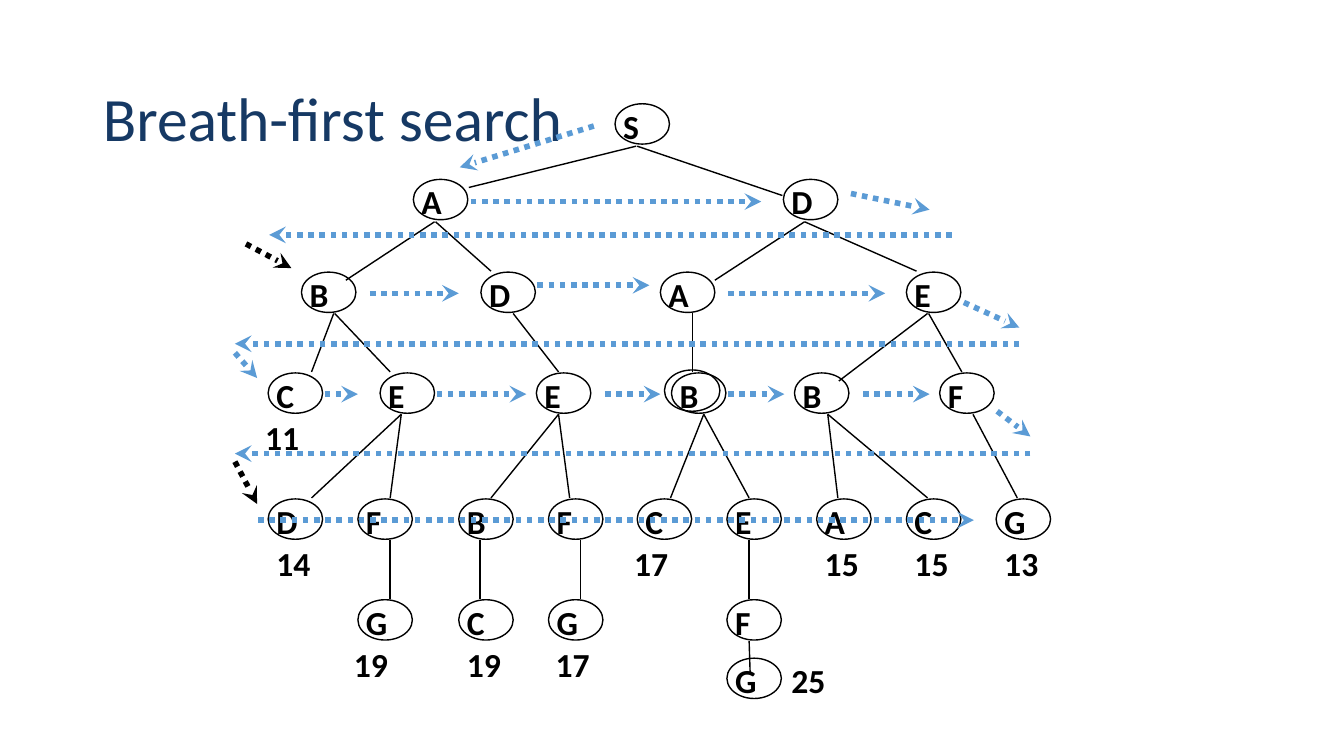
import pptx
import pptx.util
import pptx.dml.color
import pptx.enum.dml
import pptx.enum.shapes
import pptx.enum.text
import pptx.oxml
import pptx.oxml.ns

Inches = pptx.util.Inches
COLORS = {"title": "163964", "ink": "000000", "visit": "5B9BD5"}
FONT = "Calibri"
NODE_W, NODE_H = 0.54, 0.4
LETTER_WIDTHS = {"A": 0.34, "B": 0.33, "C": 0.32, "D": 0.35, "E": 0.31,
                 "F": 0.29, "G": 0.35, "S": 0.3}
COST_W = 0.48

# Each tree level: top, then (letter, left) of its nodes
LEVELS = [
    (1.03, [("S", 6.1)]),
    (1.78, [("A", 4.1), ("D", 7.77)]),
    (2.7, [("B", 2.99), ("D", 4.77), ("A", 6.55), ("E", 8.99)]),
    (3.7, [("C", 2.66), ("E", 3.77), ("E", 5.32), ("B", 6.66), ("B", 7.88), ("F", 9.32)]),
    (4.95, [("D", 2.66), ("F", 3.55), ("B", 4.55), ("F", 5.44), ("C", 6.32),
            ("E", 7.21), ("A", 8.1), ("C", 8.99), ("G", 9.88)]),
    (5.95, [("G", 3.55), ("C", 4.55), ("G", 5.44), ("F", 7.21)]),
    (6.53, [("G", 7.21)]),
]

# Each gap between levels: parent y, child y, then (parent x, child x)
BRANCHES = [
    (2.2, 2.69, [(4.32, 4.87), (7.98, 9.09)]),
    (2.2, 2.78, [(4.31, 3.43), (7.98, 7.09)]),
    (3.11, 3.69, [(3.31, 3.09), (3.32, 3.87), (5.09, 5.54), (6.87, 6.87), (9.21, 9.54)]),
    (4.11, 4.94, [(3.98, 3.09), (3.98, 3.87), (5.54, 4.87), (5.54, 5.65), (6.98, 6.65),
                  (6.98, 7.43), (8.21, 8.31), (8.21, 9.2), (9.65, 10.09)]),
    (5.36, 5.94, [(x, x) for x in (3.87, 4.76, 5.76, 7.43)]),
    (1.45, 1.86, [(6.31, 4.65)]),
    (1.45, 1.94, [(6.32, 7.76)]),
    (3.11, 3.78, [(9.2, 8.32)]),
    (6.36, 6.67, [(7.43, 7.44)]),
]

# Each cost row: top, then (cost, left)
COSTS = [
    (4.17, [("11", 2.56)]),
    (5.42, [("14", 2.67), ("17", 6.22), ("15", 8.11), ("15", 9), ("13", 9.89)]),
    (6.42, [("19", 3.44), ("19", 4.56), ("17", 5.44)]),
    (6.58, [("25", 7.78)]),
]

# Horizontal visiting arrows: y, then (start x, end x)
SWEEPS = [
    (2, [(4.67, 7.55)]),
    (2.33, [(9.44, 2.67)]),
    (2.91, [(3.67, 4.55), (7.22, 8.78)]),
    (2.83, [(5.33, 6.44)]),
    (3.41, [(10.11, 2.33)]),
    (3.91, [(3.22, 3.55), (4.33, 5.22), (6, 6.55), (7.22, 7.78), (8.56, 9.22)]),
    (4.5, [(10.22, 2.33)]),
    (5.16, [(2.56, 9.66)]),
]

# Slanted arrows between levels: colour, start, end
TURNS = [
    ("visit", (5.89, 1.25), (4.56, 1.66)),
    ("visit", (8.44, 1.92), (9.22, 2.08)),
    ("ink", (2.44, 2.42), (2.89, 2.66)),
    ("visit", (9.56, 3), (10.11, 3.25)),
    ("visit", (2.33, 3.5), (2.55, 3.75)),
    ("visit", (9.89, 4.08), (10.22, 4.33)),
    ("ink", (2.33, 4.58), (2.55, 5)),
]


def rgb(name):
    return pptx.dml.color.RGBColor.from_string(COLORS[name])


def write(tf, text, size=24, color="ink", bold=True, spacing=0.85):
    p = tf.paragraphs[0]
    p.alignment = pptx.enum.text.PP_ALIGN.LEFT
    p.line_spacing = spacing
    r = p.add_run()
    r.text = text
    r.font.name = FONT
    r.font.size = pptx.util.Pt(size)
    r.font.bold = bold
    r.font.color.rgb = rgb(color)


def add_title(s, text):
    sp = s.shapes.title
    sp.left, sp.top, sp.width, sp.height = map(Inches, (0.92, 0.56, 11.5, 1.29))
    tf = sp.text_frame
    tf.auto_size = pptx.enum.text.MSO_AUTO_SIZE.NONE
    tf.vertical_anchor = pptx.enum.text.MSO_ANCHOR.MIDDLE
    write(tf, text, size=44, color="title", bold=False, spacing=0.9)


def add_label(s, text, left, top, width):
    tf = s.shapes.add_textbox(Inches(left), Inches(top), Inches(width), Inches(0.4)).text_frame
    tf.margin_left = tf.margin_right = Inches(0.07)
    tf.margin_top = tf.margin_bottom = Inches(0.03)
    tf.word_wrap = False
    tf.auto_size = pptx.enum.text.MSO_AUTO_SIZE.SHAPE_TO_FIT_TEXT
    write(tf, text)


def add_ring(s, left, top, width=NODE_W, height=NODE_H):
    sp = s.shapes.add_shape(pptx.enum.shapes.MSO_SHAPE.OVAL,
                            Inches(left), Inches(top), Inches(width), Inches(height))
    sp.shadow.inherit = False
    sp.fill.background()
    sp.line.color.rgb = rgb("ink")
    sp.line.width = pptx.util.Pt(1)


def add_line(s, start, end, color="ink", width=1):
    cx = s.shapes.add_connector(pptx.enum.shapes.MSO_CONNECTOR.STRAIGHT,
                                *map(Inches, start + end))
    cx.line.color.rgb = rgb(color)
    cx.line.width = pptx.util.Pt(width)
    props = cx._element.spPr
    props.append(pptx.oxml.parse_xml(f"<a:effectLst {pptx.oxml.ns.nsdecls('a')}/>"))
    return cx


def add_arrow(s, start, end, color="visit"):
    cx = add_line(s, start, end, color, width=4)
    cx.line.dash_style = pptx.enum.dml.MSO_LINE.ROUND_DOT
    cx.line._get_or_add_ln().append(
        pptx.oxml.parse_xml(f"<a:tailEnd {pptx.oxml.ns.nsdecls('a')} type='stealth'/>"))


def main():
    prs = pptx.Presentation()
    prs.slide_width, prs.slide_height = Inches(13.33), Inches(7.5)
    s = prs.slides.add_slide(prs.slide_layouts[5])
    add_title(s, "Breath-first search")
    for top, nodes in LEVELS:
        for letter, left in nodes:
            add_ring(s, left, top)
    for parent_y, child_y, pairs in BRANCHES:
        for parent_x, child_x in pairs:
            add_line(s, (parent_x, parent_y), (child_x, child_y))
    for top, nodes in LEVELS:
        for letter, left in nodes:
            add_label(s, letter, left + 0.01, top + 0.05, LETTER_WIDTHS[letter])
    for top, costs in COSTS:
        for cost, left in costs:
            add_label(s, cost, left, top, COST_W)
    add_ring(s, 6.59, 3.67, 0.55, 0.41)
    for y, spans in SWEEPS:
        for start_x, end_x in spans:
            add_arrow(s, (start_x, y), (end_x, y))
    for color, start, end in TURNS:
        add_arrow(s, start, end, color)
    prs.save("out.pptx")


if __name__ == "__main__":
    main()
